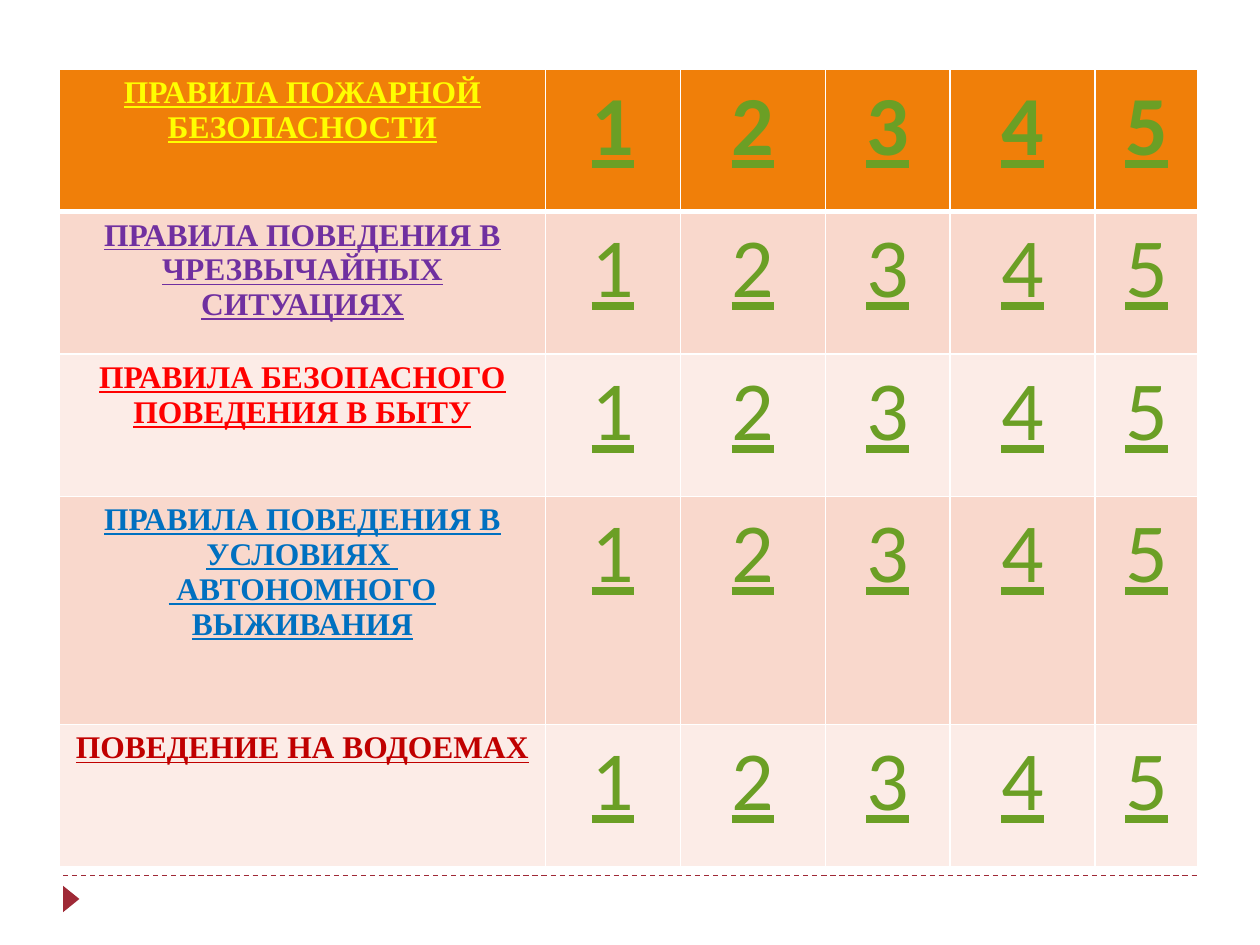
from lxml import etree
from pptx import Presentation
from pptx import util as u
from pptx.dml.color import RGBColor
from pptx.enum import dml, shapes, text
from pptx.oxml.ns import qn

COLORS = {
    "header": "F07F09", "dark band": "F9D8CC", "light band": "FCECE7",
    "number": "6B9F25", "accent": "9F2936", "border": "FFFFFF",
}
# Paragraphs of each category and their colour
CATEGORIES = [
    (["ПРАВИЛА ПОЖАРНОЙ БЕЗОПАСНОСТИ"], "FFFF00"),
    (["ПРАВИЛА ПОВЕДЕНИЯ В ЧРЕЗВЫЧАЙНЫХ СИТУАЦИЯХ"], "7030A0"),
    (["ПРАВИЛА БЕЗОПАСНОГО ПОВЕДЕНИЯ В БЫТУ"], "FF0000"),
    (["ПРАВИЛА ПОВЕДЕНИЯ В УСЛОВИЯХ ", " АВТОНОМНОГО ВЫЖИВАНИЯ"], "0070C0"),
    (["ПОВЕДЕНИЕ НА ВОДОЕМАХ"], "C00000"),
]
NUMBERS = ["1", "2", "3", "4", "5"]
COLUMNS = [3.86, 1.07, 1.15, 0.99, 1.15, 0.82]
ROWS = [1.13, 1.13, 1.13, 1.81, 1.13]
LEFT, TOP = 0.47, 0.55


def rgb(value):
    return RGBColor.from_string(value)


def write_cell(cell, lines, face, size, color, bold):
    cell.text = "\n".join(lines)
    for para in cell.text_frame.paragraphs:
        para.alignment = text.PP_ALIGN.CENTER
        font = para.runs[0].font
        font.name, font.size = face, u.Pt(size)
        font.bold, font.underline = bold, True
        font.color.rgb = rgb(color)


def paint_cell(cell, fill, top, bottom):
    """Set the cell's borders, in points, and then its fill."""
    props = cell._tc.get_or_add_tcPr()
    for side, width in (("L", 1), ("R", 1), ("T", top), ("B", bottom)):
        line = etree.SubElement(props, qn(f"a:ln{side}"), w=str(u.Pt(width)))
        solid = etree.SubElement(line, qn("a:solidFill"))
        etree.SubElement(solid, qn("a:srgbClr"), val=COLORS["border"])
    cell.fill.solid()
    cell.fill.fore_color.rgb = rgb(COLORS[fill])


def add_question_table(slide):
    frame = slide.shapes.add_table(
        len(ROWS), len(COLUMNS), u.Inches(LEFT), u.Inches(TOP),
        u.Inches(sum(COLUMNS)), u.Inches(sum(ROWS)))
    table = frame.table
    for column, width in zip(table.columns, COLUMNS):
        column.width = u.Inches(width)
    for index, (lines, color) in enumerate(CATEGORIES):
        table.rows[index].height = u.Inches(ROWS[index])
        is_header = index == 0
        fill = "header" if is_header else ("light band", "dark band")[index % 2]
        cells = list(table.rows[index].cells)
        write_cell(cells[0], lines, "Times New Roman", 18, color, True)
        for cell, number in zip(cells[1:], NUMBERS):
            write_cell(cell, [number], "Calibri", 48, COLORS["number"], is_header)
        for cell in cells:
            paint_cell(cell, fill, 3 if index == 1 else 1, 3 if is_header else 1)


def add_footer(slide):
    rule = slide.shapes.add_connector(
        shapes.MSO_CONNECTOR.STRAIGHT,
        u.Inches(0.5), u.Inches(6.95), u.Inches(9.5), u.Inches(6.95))
    rule.line.color.rgb = rgb(COLORS["accent"])
    rule.line.width = u.Pt(0.75)
    rule.line.dash_style = dml.MSO_LINE.DASH
    etree.SubElement(rule._element.spPr, qn("a:effectLst"))

    marker = slide.shapes.add_shape(
        shapes.MSO_SHAPE.ISOSCELES_TRIANGLE,
        u.Inches(0.46), u.Inches(7.07), u.Inches(0.21), u.Inches(0.13))
    marker.rotation = 90
    marker.shadow.inherit = False
    marker.fill.solid()
    marker.fill.fore_color.rgb = rgb(COLORS["accent"])
    marker.line.fill.background()


def main():
    deck = Presentation()
    deck.slide_width, deck.slide_height = u.Inches(10), u.Inches(7.5)
    slide = deck.slides.add_slide(deck.slide_layouts[6])
    add_footer(slide)
    add_question_table(slide)
    deck.save("out.pptx")


if __name__ == "__main__":
    main()
